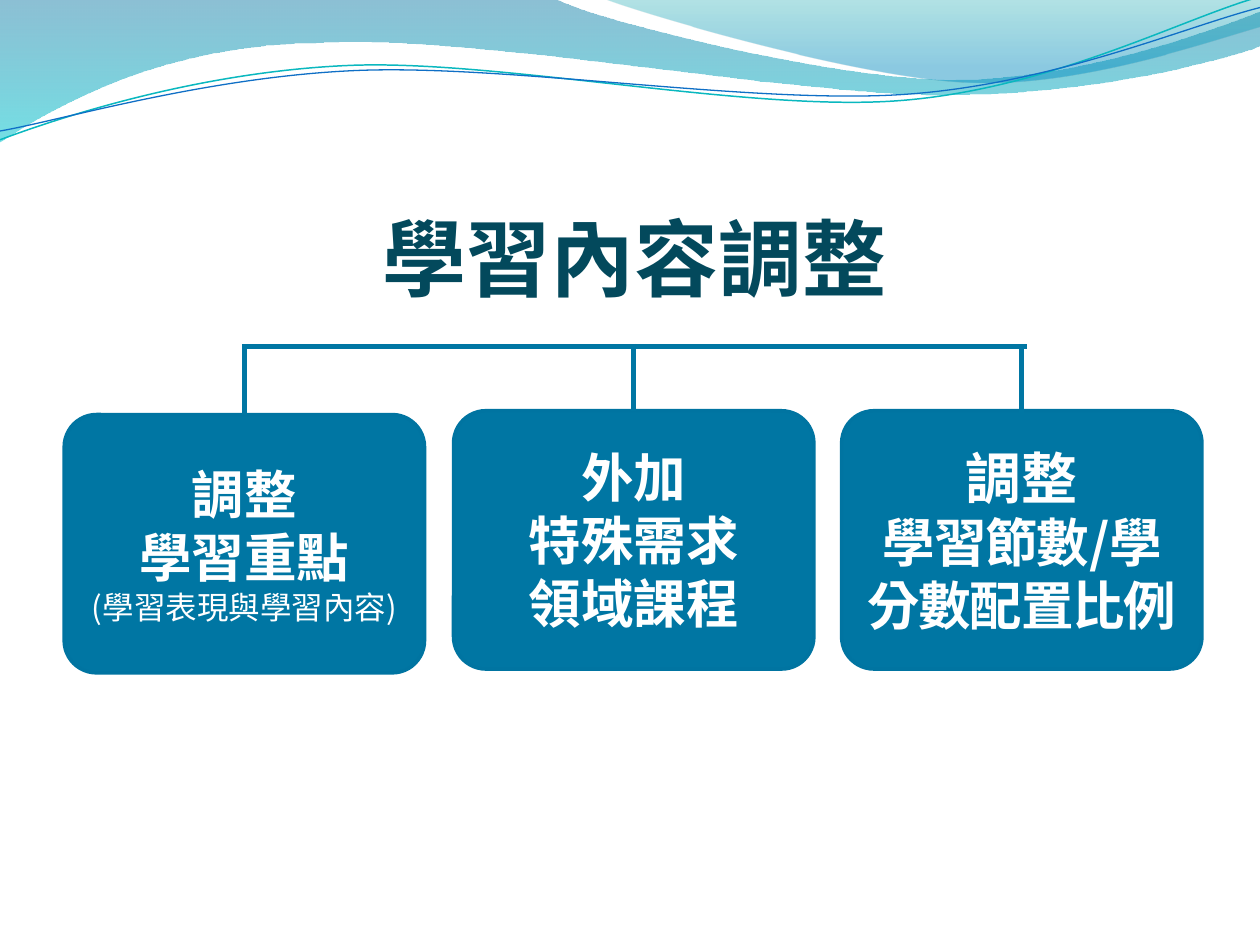
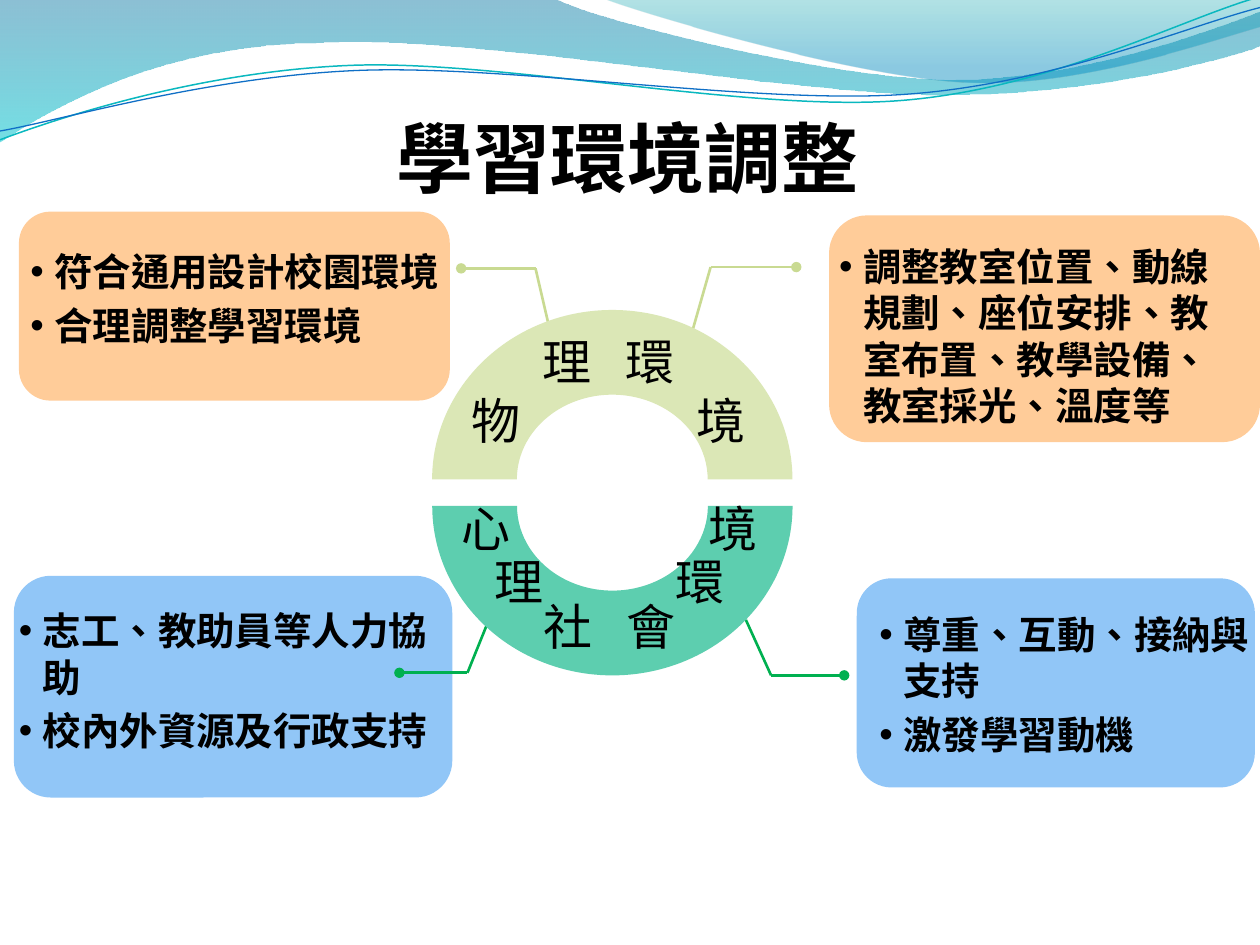
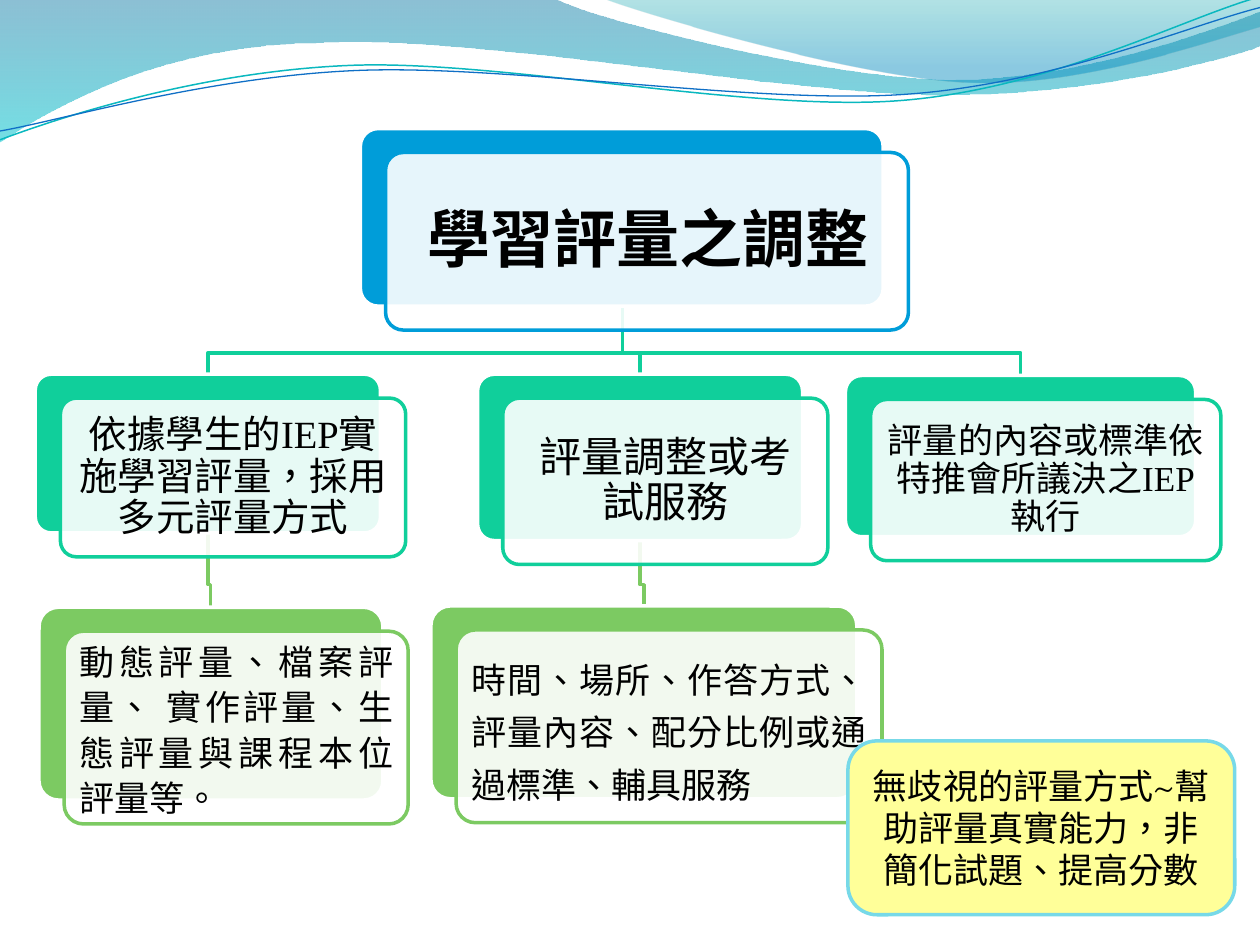
from dataclasses import dataclass
from itertools import pairwise
from typing import NamedTuple

from lxml.etree import SubElement
from pptx import Presentation
from pptx.dml.color import RGBColor
from pptx.enum.shapes import MSO_CONNECTOR, MSO_SHAPE
from pptx.enum.text import MSO_ANCHOR, MSO_AUTO_SIZE, PP_ALIGN
from pptx.oxml.ns import qn
from pptx.util import Inches, Length, Pt

SANS = "Noto Sans CJK SC"
TIMES = "Times New Roman"
BLACK = RGBColor(0x00, 0x00, 0x00)
WHITE = RGBColor(0xFF, 0xFF, 0xFF)
NAVY = RGBColor(0x03, 0x49, 0x5C)
BLUE = RGBColor(0x00, 0x76, 0xA3)
DEEP = RGBColor(0x00, 0x74, 0xA1)
CYAN = RGBColor(0x00, 0xC6, 0xCF)
TEAL = RGBColor(0x00, 0xA1, 0xA9)
AZURE = RGBColor(0x00, 0x8B, 0xBF)
AQUA = RGBColor(0x0A, 0xB8, 0xBF)
ROYAL = RGBColor(0x0F, 0x6F, 0xC6)
SKY = RGBColor(0x91, 0xC6, 0xF7)
PEACH = RGBColor(0xFF, 0xCC, 0x99)
OLIVE = RGBColor(0xC9, 0xDA, 0x92)
LIME = RGBColor(0xDB, 0xE7, 0xB6)
MINT = RGBColor(0x5D, 0xCE, 0xAF)
GREEN = RGBColor(0x00, 0xB0, 0x50)
OCEAN = RGBColor(0x00, 0x9D, 0xD9)
JADE = RGBColor(0x10, 0xCF, 0x9B)
LEAF = RGBColor(0x7C, 0xCA, 0x62)
YELLOW = RGBColor(0xFF, 0xFF, 0x99)
ICE = RGBColor(0x77, 0xD9, 0xE8)


class Box(NamedTuple):
    left: float
    top: float
    width: float
    height: float


class Pad(NamedTuple):
    left: float = 0.1
    top: float = 0.05
    right: float = 0.1
    bottom: float = 0.05


class Stop(NamedTuple):
    color: RGBColor
    place: float
    alpha: int


NORMAL = Pad()
FLUSH = Pad(0, 0, 0, 0)


@dataclass(frozen=True)
class Line:
    text: str
    size: float
    color: RGBColor = BLACK
    bold: bool = False
    face: str = SANS
    align: PP_ALIGN = PP_ALIGN.CENTER
    leading: float | Length = 1.0
    before: float = 0
    bullet: bool = False
    tabs: tuple[float, ...] = ()
    track: int = 0


@dataclass(frozen=True)
class Wave:
    start: tuple
    moves: tuple
    stops: tuple[Stop, ...] = ()
    color: RGBColor | None = None
    weight: float = 0


@dataclass(frozen=True)
class Node:
    box: Box
    tone: RGBColor
    line: Line | None = None
    inset: float = 0.08


WAVES = (
    Wave((0, -0.01), (
        ((4.4, -0.01),),
        ((4.76, 0.17), (6.64, 0.63), (7.58, 0.63)),
        ((8.53, 0.63), (9.58, 0.26), (10, 0.09)),
        ((10.01, 0.36),),
        ((9.83, 0.44), (8.7, 0.76), (7.46, 0.75)),
        ((6.22, 0.75), (3.82, 0.28), (2.57, 0.34)),
        ((1.29, 0.35), (0.46, 0.83), (-0.01, 1.13)),
        ((0, -0.01),),
    ), (Stop(DEEP, 0, 45), Stop(CYAN, 1, 55))),
    Wave((4.79, -0.01), (
        ((5.09, 0.11), (6.82, 0.62), (7.69, 0.65)),
        ((8.56, 0.69), (9.61, 0.32), (10, 0.21)),
        ((10, 0),),
        ((4.79, -0.01),),
    ), (Stop(TEAL, 0, 30), Stop(AZURE, 0.8, 45))),
    Wave((0, 1.11), (
        ((0.48, 0.93), (1.58, 0.57), (2.77, 0.52)),
        ((3.95, 0.47), (5.93, 0.89), (7.13, 0.8)),
        ((8.33, 0.71), (9.38, 0.15), (9.98, -0.02)),
    ), color=AQUA, weight=0.85),
    Wave((0, 1.04), (
        ((0.47, 0.96), (1.64, 0.61), (2.83, 0.56)),
        ((4.03, 0.51), (5.97, 0.83), (7.17, 0.75)),
        ((8.36, 0.67), (9.41, 0.21), (10, 0.06)),
    ), color=ROYAL, weight=0.75),
)


def frame(box: Box) -> tuple[Length, ...]:
    return tuple(Inches(side) for side in box)


def fade(shape, alphas: tuple[int, ...]) -> None:
    for tint, alpha in zip(shape.element.spPr.iter(qn("a:srgbClr")), alphas):
        SubElement(tint, qn("a:alpha"), val=str(alpha * 1000))


def paint(shape, fill: RGBColor | None, line: RGBColor | None = None,
          weight: float = 2, alpha: int = 100) -> None:
    shape.shadow.inherit = False
    if fill is None:
        shape.fill.background()
    else:
        shape.fill.solid()
        shape.fill.fore_color.rgb = fill
        if alpha < 100:
            fade(shape, (alpha,))
    if line is None:
        shape.line.fill.background()
    else:
        shape.line.color.rgb = line
        shape.line.width = Pt(weight)


def trace(shapes, points: list, close: bool = False):
    start, *rest = [(Inches(x), Inches(y)) for x, y in points]
    pen = shapes.build_freeform(*start)
    pen.add_line_segments(rest, close=close)
    return pen.convert_to_shape()


def curve(shape, moves: tuple) -> None:
    legs = list(shape.element.spPr.iter(qn("a:lnTo")))
    for leg, move in zip(legs, moves):
        if len(move) == 3:
            arc = leg.makeelement(qn("a:cubicBezTo"))
            for x, y in move:
                SubElement(arc, qn("a:pt"), x=str(Inches(x) - shape.left),
                           y=str(Inches(y) - shape.top))
            leg.getparent().replace(leg, arc)


def draw_wave(shapes, wave: Wave):
    ends = [wave.start, *(move[-1] for move in wave.moves)]
    shape = trace(shapes, ends, close=bool(wave.stops))
    curve(shape, wave.moves)
    paint(shape, None, wave.color, wave.weight)
    if wave.stops:
        shape.fill.gradient()
        shape.fill.gradient_angle = 270
        for mark, stop in zip(shape.fill.gradient_stops, wave.stops):
            mark.color.rgb = stop.color
            mark.position = stop.place
        fade(shape, tuple(stop.alpha for stop in wave.stops))
    return shape


def dress(master, slide) -> None:
    tree = master.element.cSld.spTree
    for spot, wave in enumerate(WAVES, 2):
        tree.insert(spot, draw_wave(slide.shapes, wave).element)


def style(para, line: Line) -> None:
    para.text = line.text
    para.alignment = line.align
    para.line_spacing = line.leading
    para.space_before = Pt(line.before)
    props = para._p.get_or_add_pPr()
    if line.bullet:
        props.set("marL", str(Inches(0.19)))
        props.set("indent", str(-Inches(0.19)))
        SubElement(props, qn("a:buFont"), typeface="Arial")
        SubElement(props, qn("a:buChar"), char="•")
    if line.tabs:
        stops = SubElement(props, qn("a:tabLst"))
        for place in line.tabs:
            SubElement(stops, qn("a:tab"), pos=str(Inches(place)), algn="ctr")
    font = para.font
    font.name = line.face
    font.size = Pt(line.size)
    font.bold = line.bold
    font.color.rgb = line.color
    chars = props.find(qn("a:defRPr"))
    chars.set("lang", "zh-TW")
    if line.track:
        chars.set("spc", str(line.track))
    chars.find(qn("a:latin")).addnext(chars.makeelement(qn("a:ea"), {"typeface": SANS}))


def write(shape, lines: tuple[Line, ...], pad: Pad = NORMAL,
          anchor: MSO_ANCHOR = MSO_ANCHOR.MIDDLE) -> None:
    body = shape.text_frame
    body.word_wrap = True
    body.auto_size = MSO_AUTO_SIZE.NONE
    body.vertical_anchor = anchor
    body.margin_left, body.margin_top = Inches(pad.left), Inches(pad.top)
    body.margin_right, body.margin_bottom = Inches(pad.right), Inches(pad.bottom)
    for spot, line in enumerate(lines):
        style(body.add_paragraph() if spot else body.paragraphs[0], line)


def place(slide, holder, box: Box, lines: tuple[Line, ...], pad: Pad = NORMAL,
          anchor: MSO_ANCHOR = MSO_ANCHOR.MIDDLE) -> None:
    holder.left, holder.top, holder.width, holder.height = frame(box)
    write(holder, lines, pad, anchor)
    slide.shapes.element.append(holder.element)


def panel(slide, box: Box, fill: RGBColor, line: RGBColor | None = None,
          round: float | None = None, alpha: int = 100):
    shape = slide.shapes.add_shape(MSO_SHAPE.ROUNDED_RECTANGLE, *frame(box))
    if round is not None:
        shape.adjustments[0] = round
    paint(shape, fill, line, alpha=alpha)
    return shape


def link(slide, start: tuple, end: tuple, color: RGBColor, weight: float,
         dot: bool = False) -> None:
    ends = [Inches(side) for side in (*start, *end)]
    wire = slide.shapes.add_connector(MSO_CONNECTOR.STRAIGHT, *ends)
    wire.line.color.rgb = color
    wire.line.width = Pt(weight)
    if dot:
        SubElement(wire.element.spPr.find(qn("a:ln")), qn("a:tailEnd"), type="oval")
    SubElement(wire.element.spPr, qn("a:effectLst"))


def draw_content(slide) -> None:
    place(slide, slide.shapes.title, Box(2.95, 1.39, 4.17, 1.25),
          (Line("學習內容調整", 48, NAVY, True),), Pad(0, 0.05, 0, 0))
    cards = (
        (0.51, 3.29, (Line("調整", 30, WHITE, True),
                      Line("學習重點", 30, WHITE, True),
                      Line("(學習表現與學習內容)", 18, WHITE))),
        (3.6, 3.26, tuple(Line(text, 30, WHITE, True)
                          for text in ("外加", "特殊需求", "領域課程"))),
        (6.68, 3.26, (Line("調整", 32, WHITE, True),
                      Line("學習節數/學分數配置比例", 30, WHITE, True, track=-70))),
    )
    for left, top, lines in cards:
        card = panel(slide, Box(left, top, 2.86, 2.05), BLUE, DEEP, 0.125)
        write(card, lines)
    link(slide, (1.92, 2.75), (8.15, 2.75), BLUE, 3)
    for x, top, bottom in ((1.94, 2.75, 3.29), (5.03, 2.73, 3.26), (8.11, 2.75, 3.29)):
        link(slide, (x, top), (x, bottom), BLUE, 3)


def draw_setting(slide) -> None:
    groups = (
        (Box(6.8, 4.59, 3.16, 1.66), SKY, Box(6.98, 4.85, 3.02, 1.18),
         ("尊重、互動、接納與支持", "激發學習動機")),
        (Box(0.11, 4.57, 3.48, 1.76), SKY, Box(0.15, 4.82, 3.31, 1.18),
         ("志工、教助員等人力協助", "校內外資源及行政支持")),
        (Box(6.58, 1.71, 3.42, 1.8), PEACH, Box(6.66, 1.93, 3.15, 1.48),
         ("調整教室位置、動線規劃、座位安排、教室布置、教學設備、教室採光、溫度等",)),
        (Box(0.15, 1.68, 3.42, 1.5), PEACH, Box(0.24, 1.97, 3.29, 0.81),
         ("符合通用設計校園環境", "合理調整學習環境")),
    )
    title, *lists = list(slide.placeholders)[:5]
    for holder, (box, fill, area, texts) in zip(lists, groups):
        panel(slide, box, fill)
        lines = tuple(Line(text, 22, bold=True, align=PP_ALIGN.LEFT, before=4.4,
                           bullet=True) for text in texts)
        place(slide, holder, area, lines, FLUSH, MSO_ANCHOR.TOP)

    paths = (
        (OLIVE, (4.45, 2.99), (4.25, 2.13), (3.66, 2.13)),
        (OLIVE, (5.4, 2.96), (5.64, 2.12), (6.32, 2.12)),
        (GREEN, (3.9, 4.87), (3.71, 5.34), (3.17, 5.34)),
        (GREEN, (5.92, 4.92), (6.12, 5.36), (6.7, 5.36)),
    )
    for color, *points in paths:
        for start, end in pairwise(points):
            link(slide, start, end, color, 1.5, dot=end == points[-1])

    for top, turn, fill in ((2.67, 180, MINT), (2.46, 0, LIME)):
        arc = slide.shapes.add_shape(MSO_SHAPE.BLOCK_ARC, *frame(Box(3.43, top, 2.86, 2.69)))
        arc.rotation = turn
        paint(arc, fill)

    labels = (
        (Box(3.42, 2.58, 2.82, 1.04),
         (("理", "環", 0.33, 1.0), ("物", "境", 0.89, 1.0))),
        (Box(3.43, 3.96, 2.82, 1.31),
         (("心", "境", 0.98, Pt(30)), ("理", "環", 0.72, Pt(30)), ("社", "會", 0.33, Pt(26)))),
    )
    for box, rows in labels:
        label = slide.shapes.add_textbox(*frame(box))
        write(label, tuple(
            Line(f"\t{left}\t{right}", 28, align=PP_ALIGN.LEFT, leading=leading,
                 tabs=(1.31 - gap, 1.31 + gap))
            for left, right, gap, leading in rows), anchor=MSO_ANCHOR.TOP)

    place(slide, title, Box(3.05, 0.68, 3.87, 1.22),
          (Line("學習環境調整", 44, bold=True, align=PP_ALIGN.LEFT, leading=1.2, before=8.8),),
          anchor=MSO_ANCHOR.TOP)


def draw_node(slide, node: Node) -> None:
    left, top, width, height = node.box
    panel(slide, node.box, node.tone, WHITE, 0.1)
    left, top = left + 0.2, top + 0.19
    panel(slide, Box(left, top, width, height), WHITE, node.tone, 0.1, 90)
    if node.line:
        area = Box(left + 0.04, top + 0.04, width - 0.08, height - 0.08)
        label = slide.shapes.add_textbox(*frame(area))
        write(label, (node.line,), Pad(*[node.inset] * 4))


def draw_rating(slide) -> None:
    elbows = (
        (JADE, (4.94, 2.43), (8.1, 2.98), 2.8),
        (LEAF, (5.08, 4.29), (5.11, 4.81), 4.64),
        (JADE, (4.94, 2.43), (5.08, 2.97), 2.8),
        (LEAF, (1.65, 4.23), (1.67, 4.82), 4.64),
        (JADE, (4.94, 2.43), (1.65, 2.97), 2.8),
    )
    for color, start, end, level in elbows:
        points = [start, (start[0], level), (end[0], level), end]
        paint(trace(slide.shapes, points), None, color)

    nodes = (
        Node(Box(2.86, 1.02, 4.15, 1.41), OCEAN),
        Node(Box(0.28, 2.97, 2.74, 1.26), JADE,
             Line("依據學生的IEP實施學習評量，採用多元評量方式", 22, face=TIMES, leading=0.9), 0.09),
        Node(Box(0.31, 4.82, 2.73, 1.53), LEAF,
             Line("動態評量、檔案評量、 實作評量、生態評量與課程本位評量等。", 20, face="Arial",
                  align=PP_ALIGN.JUSTIFY, leading=Pt(26))),
        Node(Box(3.79, 2.97, 2.58, 1.32), JADE,
             Line("評量調整或考試服務", 24, leading=0.9), 0.1),
        Node(Box(3.42, 4.81, 3.38, 1.53), LEAF,
             Line("時間、場所、作答方式、評量內容、配分比例或通過標準、輔具服務", 20, face="Arial",
                  align=PP_ALIGN.JUSTIFY, leading=Pt(30))),
        Node(Box(6.71, 2.98, 2.78, 1.28), JADE,
             Line("評量的內容或標準依特推會所議決之IEP執行", 20, face=TIMES, leading=0.9)),
    )
    for node in nodes:
        draw_node(slide, node)
    place(slide, slide.shapes.title, Box(3.11, 1.26, 4.07, 1.33),
          (Line("學習評量之調整", 36, bold=True, leading=0.9),), Pad(*[0.15] * 4))
    note = panel(slide, Box(6.73, 5.88, 3.07, 1.38), YELLOW, ICE)
    write(note, (Line("無歧視的評量方式~幫助評量真實能力，非簡化試題、提高分數", 20,
                      face="TeX Gyre Pagella"),))


def main() -> None:
    deck = Presentation()
    deck.slide_width, deck.slide_height = Inches(10), Inches(7.5)
    single = deck.slide_layouts.get_by_name("Title Only")
    quad = deck.slide_layouts.get_by_name("Comparison")
    pages = ((single, draw_content), (quad, draw_setting), (single, draw_rating))
    for spot, (layout, draw) in enumerate(pages):
        slide = deck.slides.add_slide(layout)
        if spot == 0:
            dress(deck.slide_master, slide)
        draw(slide)
    deck.save("out.pptx")


if __name__ == "__main__":
    main()
